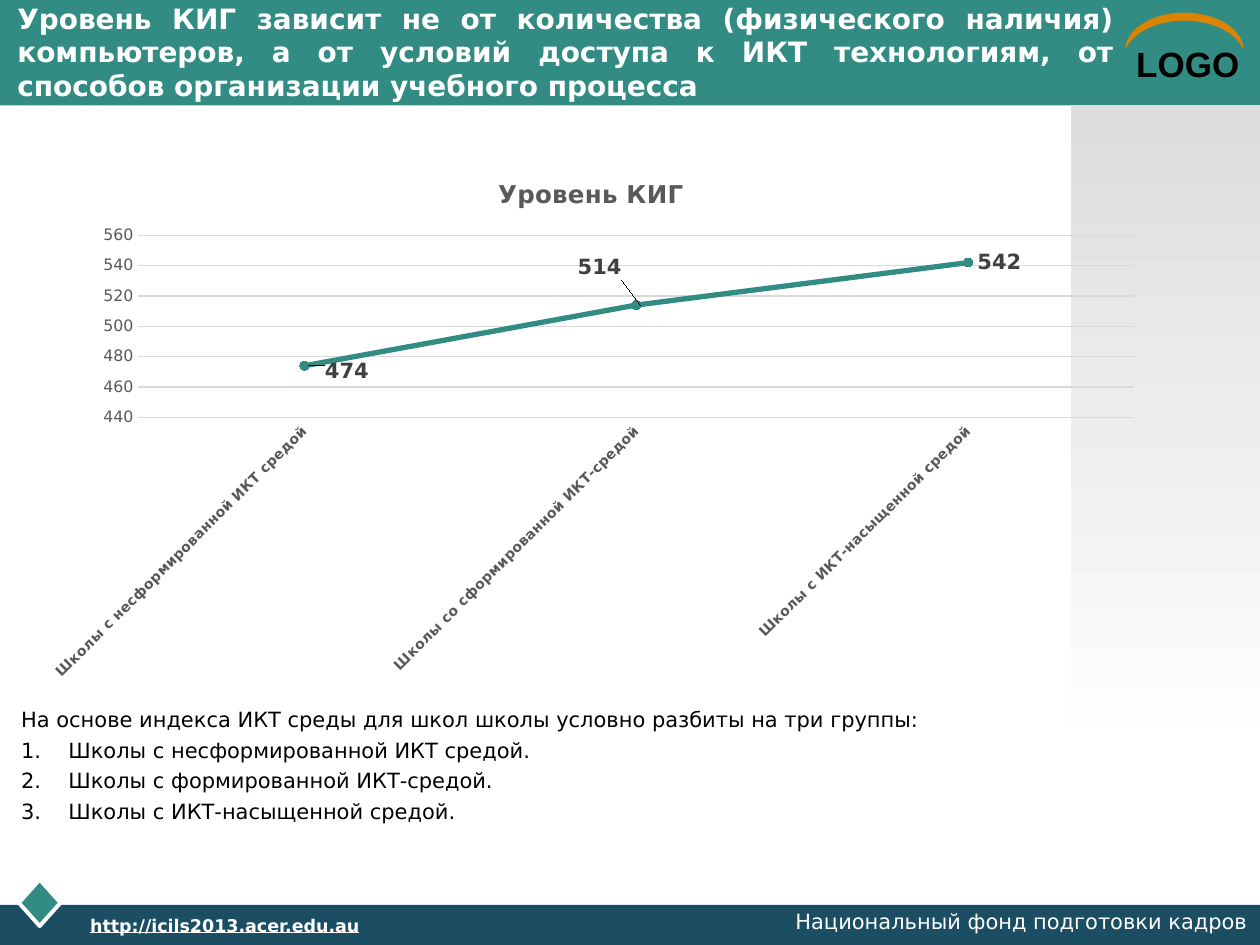
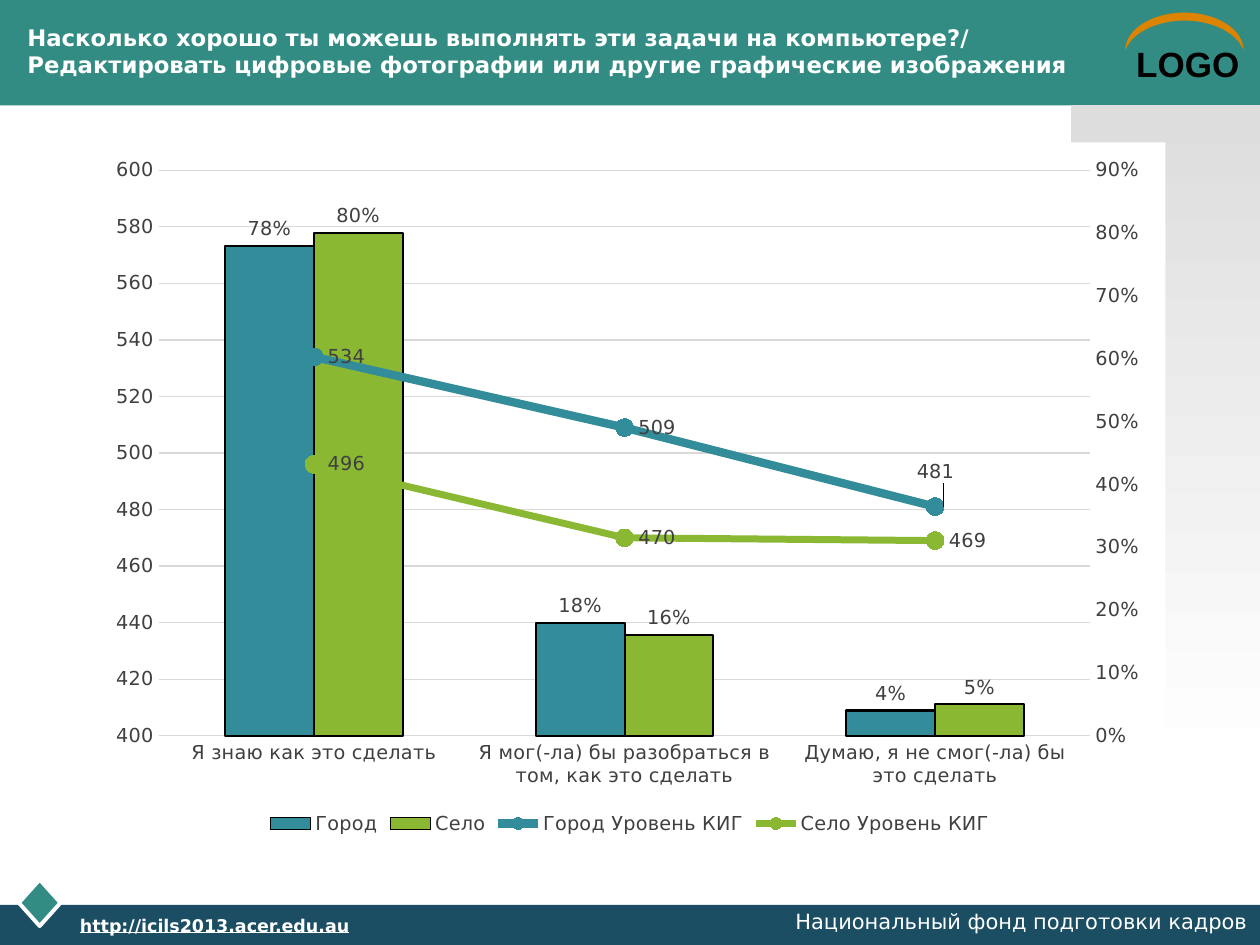
from pptx import Presentation
from pptx.chart.data import CategoryChartData
from pptx.dml.color import RGBColor
from pptx.enum.chart import XL_CHART_TYPE as ChartType
from pptx.enum.chart import XL_LABEL_POSITION as LabelPos
from pptx.enum.chart import XL_LEGEND_POSITION as LegendPos
from pptx.enum.chart import XL_MARKER_STYLE as Marker
from pptx.enum.chart import XL_TICK_MARK as Tick
from pptx.enum.shapes import MSO_SHAPE as Preset
from pptx.enum.text import MSO_ANCHOR as Anchor
from pptx.enum.text import PP_ALIGN as Align
from pptx.oxml import parse_xml
from pptx.oxml.ns import nsdecls, qn
from pptx.util import Pt

FONT = "DejaVu Sans"
TEAL, NAVY, ORANGE = "328C83", "1B4E63", "DC8300"
BLUE, GREEN = "328C99", "8AB833"
WHITE, BLACK, PALE = "FFFFFF", "000000", "DDDDDD"
GRID, AXIS_GREY, LABEL_GREY = "D9D9D9", "595959", "404040"


def rgb(value):
    """Turn a hex string into a colour."""
    return RGBColor.from_string(value)


def points(*lengths):
    """Turn numbers into lengths in points."""
    return [Pt(length) for length in lengths]


def c_xml(markup):
    """Parse chart markup whose root tag ends at the first mark '@'."""
    return parse_xml(markup.replace("@", " " + nsdecls("c", "a"), 1))


def style_font(font, size, color, bold=False, name=FONT):
    """Set the size, colour, weight and face of a font."""
    font.size, font.bold, font.name = Pt(size), bold, name
    font.color.rgb = rgb(color)


def add_text(slide, box, content, size=12, color=BLACK, bold=False, name=FONT,
             underline=False, align=Align.LEFT, anchor=Anchor.TOP):
    """Add a wrapped text box holding one paragraph per line of content."""
    frame = slide.shapes.add_textbox(*points(*box)).text_frame
    frame.word_wrap = True
    frame.vertical_anchor = anchor
    frame.text = content
    for paragraph in frame.paragraphs:
        paragraph.alignment = align
        for run in paragraph.runs:
            style_font(run.font, size, color, bold, name)
            run.font.underline = underline
    return frame


def number_paragraphs(paragraphs, indent=27, gap=3):
    """Number paragraphs automatically with a hanging indent."""
    for paragraph in paragraphs:
        paragraph.space_before = Pt(gap)
        props = paragraph._p.get_or_add_pPr()
        props.set("marL", str(Pt(indent)))
        props.set("indent", str(-Pt(indent)))
        props.append(parse_xml(f'<a:buAutoNum {nsdecls("a")} type="arabicPeriod"/>'))


def add_block(slide, preset, box, fill, outline=None):
    """Add a flat preset shape with an optional outline."""
    block = slide.shapes.add_shape(preset, *points(*box))
    block.shadow.inherit = False
    block.fill.solid()
    block.fill.fore_color.rgb = rgb(fill)
    if outline:
        block.line.color.rgb = rgb(outline)
        block.line.width = Pt(2.25)
    else:
        block.line.fill.background()
    return block


def add_frame(slide, url_left):
    """Draw the bands, ornaments and footer that all slides share."""
    add_block(slide, Preset.RECTANGLE, (0, 0, 720, 60.3), TEAL)
    add_block(slide, Preset.RECTANGLE, (0, 517, 720, 23), NAVY)
    add_block(slide, Preset.DIAMOND, (10.8, 502.6, 23.8, 26.6), TEAL, WHITE)
    add_text(slide, (642.2, 20.9, 77.8, 31.7), "LOGO", size=20, bold=True, name="Arial")
    arc = add_block(slide, Preset.MOON, (666, -15.8, 21.6, 67.7), ORANGE)
    arc.rotation = 90
    arc.adjustments[0] = 0.21
    shade = add_block(slide, Preset.RECTANGLE, (612, 60, 108, 378), PALE)
    shade.fill.gradient()
    shade.fill.gradient_angle = 270
    for stop, position, color in zip(shade.fill.gradient_stops, (0, 1), (PALE, WHITE)):
        stop.position = position
        stop.color.rgb = rgb(color)
    add_text(slide, (url_left, 519.1, 192.2, 16.6), "http://icils2013.acer.edu.au",
             size=10, color=WHITE, bold=True, underline=True, align=Align.RIGHT)
    add_text(slide, (435.6, 515.5, 284.4, 18.7), "Национальный фонд подготовки кадров",
             color=WHITE, align=Align.RIGHT)


def add_chart(slide, kind, box, categories, series, size, color, plot_area, fill=None):
    """Add a chart with its font, background and inner plot area."""
    data = CategoryChartData()
    data.categories = categories
    for name, values in series:
        data.add_series(name, values)
    chart = slide.shapes.add_chart(kind, *points(*box), data).chart
    style_font(chart.font, size, color)
    space = chart._chartSpace
    paint = f'<a:solidFill><a:srgbClr val="{fill}"/></a:solidFill>' if fill else "<a:noFill/>"
    space.find(qn("c:txPr")).addprevious(
        c_xml(f"<c:spPr@>{paint}<a:ln><a:noFill/></a:ln></c:spPr>"))
    area = space.xpath(".//c:plotArea")[0]
    for layout in area.findall(qn("c:layout")):
        area.remove(layout)
    sides = "".join(f'<c:{side} val="{share}"/>' for side, share in zip("xywh", plot_area))
    area.insert(0, c_xml('<c:layout@><c:manualLayout><c:layoutTarget val="inner"/>'
                         '<c:xMode val="edge"/><c:yMode val="edge"/>'
                         f"{sides}</c:manualLayout></c:layout>"))
    return chart


def style_axes(chart, low, high):
    """Give the axes a fixed scale, pale grid lines and no tick marks."""
    levels, groups = chart.value_axis, chart.category_axis
    levels.minimum_scale, levels.maximum_scale, levels.major_unit = low, high, 20
    levels.format.line.fill.background()
    for axis in (levels, groups):
        axis.major_tick_mark = axis.minor_tick_mark = Tick.NONE
    levels.has_major_gridlines = True
    for line in (levels.major_gridlines.format.line, groups.format.line):
        line.color.rgb = rgb(GRID)
        line.width = Pt(0.75)


def label_values(series, size, position, number_format="0", bold=False):
    """Show the values of a series beside its points."""
    labels = series.data_labels
    labels.show_value = True
    labels.number_format = number_format
    labels.number_format_is_linked = False
    labels.position = position
    style_font(labels.font, size, LABEL_GREY, bold)


def shift_label(series, index, dx, dy, size, bold=False):
    """Move one point label by shares of the chart size."""
    label = series.points[index].data_label
    style_font(label.font, size, LABEL_GREY, bold)
    label.position = LabelPos.RIGHT
    series._element.xpath(f'.//c:dLbl/c:idx[@val="{index}"]')[0].addnext(
        c_xml(f'<c:layout@><c:manualLayout><c:x val="{dx}"/><c:y val="{dy}"/>'
              "</c:manualLayout></c:layout>"))


def style_line(series, color, width, marker_size):
    """Draw a series as a straight line with round markers."""
    series.smooth = False
    series.format.line.color.rgb = rgb(color)
    series.format.line.width = Pt(width)
    series.marker.style, series.marker.size = Marker.CIRCLE, marker_size
    series.marker.format.fill.solid()
    series.marker.format.fill.fore_color.rgb = rgb(color)
    series.marker.format.line.color.rgb = rgb(color)


def split_to_lines(chart, first):
    """Turn the series from first on into lines and give the columns a right axis."""
    columns = chart._chartSpace.xpath(".//c:barChart")[0]
    lines = c_xml('<c:lineChart@><c:grouping val="standard"/><c:varyColors val="0"/>'
                  '<c:marker val="1"/></c:lineChart>')
    columns.addnext(lines)
    for ser in columns.findall(qn("c:ser"))[first:]:
        for inversion in ser.findall(qn("c:invertIfNegative")):
            ser.remove(inversion)
        lines.find(qn("c:marker")).addprevious(ser)
    for axis_id, new_id in zip(columns.findall(qn("c:axId")), ("5001", "5002")):
        lines.append(c_xml(f'<c:axId@ val="{axis_id.get("val")}"/>'))
        axis_id.set("val", new_id)
    hidden = ('<c:catAx@><c:axId val="5001"/><c:scaling><c:orientation val="minMax"/>'
              '</c:scaling><c:delete val="1"/><c:axPos val="b"/>'
              '<c:crossAx val="5002"/><c:crosses val="autoZero"/></c:catAx>')
    shares = ('<c:valAx@><c:axId val="5002"/><c:scaling><c:orientation val="minMax"/>'
              '<c:max val="0.9"/><c:min val="0"/></c:scaling><c:delete val="0"/>'
              '<c:axPos val="r"/><c:numFmt formatCode="0%" sourceLinked="0"/>'
              '<c:majorTickMark val="none"/><c:minorTickMark val="none"/>'
              '<c:tickLblPos val="nextTo"/><c:spPr><a:ln><a:noFill/></a:ln></c:spPr>'
              '<c:crossAx val="5001"/><c:crosses val="max"/>'
              '<c:crossBetween val="between"/><c:majorUnit val="0.1"/></c:valAx>')
    last = chart.value_axis._element
    last.addnext(c_xml(shares))
    last.addnext(c_xml(hidden))


def add_level_chart(slide):
    """Chart the literacy level of three groups of schools."""
    schools = ["Школы с несформированной ИКТ средой",
               "Школы со сформированной ИКТ-средой",
               "Школы с ИКТ-насыщенной средой"]
    chart = add_chart(slide, ChartType.LINE_MARKERS, (14.4, 88.6, 646.6, 306), schools,
                      [("Уровень КИГ", (474, 514, 542))], 10, BLACK, (0.1, 0.15, 0.88, 0.34))
    chart.has_legend = False
    chart.has_title = True
    chart.chart_title.text_frame.text = "Уровень КИГ"
    heading = chart.chart_title.text_frame.paragraphs[0].runs[0]
    style_font(heading.font, 14, AXIS_GREY, bold=True)
    style_axes(chart, 440, 560)
    style_font(chart.value_axis.tick_labels.font, 9, AXIS_GREY)
    style_font(chart.category_axis.tick_labels.font, 8, AXIS_GREY, bold=True)
    chart.category_axis._element.find(qn("c:txPr")).find(qn("a:bodyPr")).set("rot", "-2700000")
    chart.plots[0].vary_by_categories = False
    level = chart.plots[0].series[0]
    style_line(level, TEAL, 3, 5)
    label_values(level, 12, LabelPos.RIGHT, bold=True)
    shift_label(level, 0, 0.01, 0.01, 12, bold=True)
    shift_label(level, 1, -0.06, -0.07, 12, bold=True)


def add_skill_chart(slide):
    """Chart the shares of answers as columns and the levels as lines."""
    answers = ["Я знаю как это сделать",
               "Я мог(-ла) бы разобраться в том, как это сделать",
               "Думаю, я не смог(-ла) бы это сделать"]
    results = [("Город", (0.78, 0.18, 0.04)), ("Село", (0.8, 0.16, 0.05)),
               ("Город Уровень КИГ", (534, 509, 481)),
               ("Село Уровень КИГ", (496, 470, 469))]
    chart = add_chart(slide, ChartType.COLUMN_CLUSTERED, (54, 81.4, 612, 398.9), answers,
                      results, 11, LABEL_GREY, (0.06, 0.04, 0.87, 0.81), fill=WHITE)
    chart.has_title = False
    chart.has_legend = True
    chart.legend.position = LegendPos.BOTTOM
    chart.legend.include_in_layout = False
    style_axes(chart, 400, 600)
    split_to_lines(chart, 2)
    shares, levels = chart.plots
    shares.vary_by_categories = False
    shares.gap_width, shares.overlap = 150, 0
    for share, level, color, width in zip(shares.series, levels.series, (BLUE, GREEN), (4.75, 4)):
        share.format.fill.solid()
        share.format.fill.fore_color.rgb = rgb(color)
        share.format.line.color.rgb = rgb(BLACK)
        share.format.line.width = Pt(1.25)
        label_values(share, 11, LabelPos.OUTSIDE_END, "0%")
        style_line(level, color, width, 10)
        label_values(level, 11, LabelPos.RIGHT)
    shift_label(levels.series[0], 2, -0.03, -0.05, 11)


def build_level_slide(slide):
    """Fill the slide on the literacy level by school group."""
    add_frame(slide, 20.2)
    add_text(slide, (2.9, 4.3, 640.8, 50.4),
             "Уровень КИГ зависит не от количества (физического наличия) компьютеров, "
             "а от условий доступа к ИКТ технологиям, от способов организации учебного процесса",
             size=16, color=WHITE, bold=True, align=Align.JUSTIFY, anchor=Anchor.MIDDLE)
    add_level_chart(slide)
    groups = add_text(slide, (5, 400.3, 615.6, 96.5), "\n".join([
        "На основе индекса ИКТ среды для школ школы условно разбиты на три группы:",
        "Школы с несформированной ИКТ средой.",
        "Школы с формированной ИКТ-средой.",
        "Школы с ИКТ-насыщенной средой."]))
    number_paragraphs(groups.paragraphs[1:])


def build_skill_slide(slide):
    """Fill the slide on editing digital photographs."""
    add_frame(slide, 14.4)
    add_skill_chart(slide)
    add_text(slide, (8.6, 10.1, 624.2, 38.9),
             "Насколько хорошо ты можешь выполнять эти задачи на компьютере?/ "
             "Редактировать цифровые фотографии или другие графические изображения",
             size=13, color=WHITE, bold=True)


def main():
    """Build and save the presentation."""
    deck = Presentation()
    deck.slide_width, deck.slide_height = points(720, 540)
    for build in (build_level_slide, build_skill_slide):
        build(deck.slides.add_slide(deck.slide_layouts[6]))
    deck.save("out.pptx")


if __name__ == "__main__":
    main()
